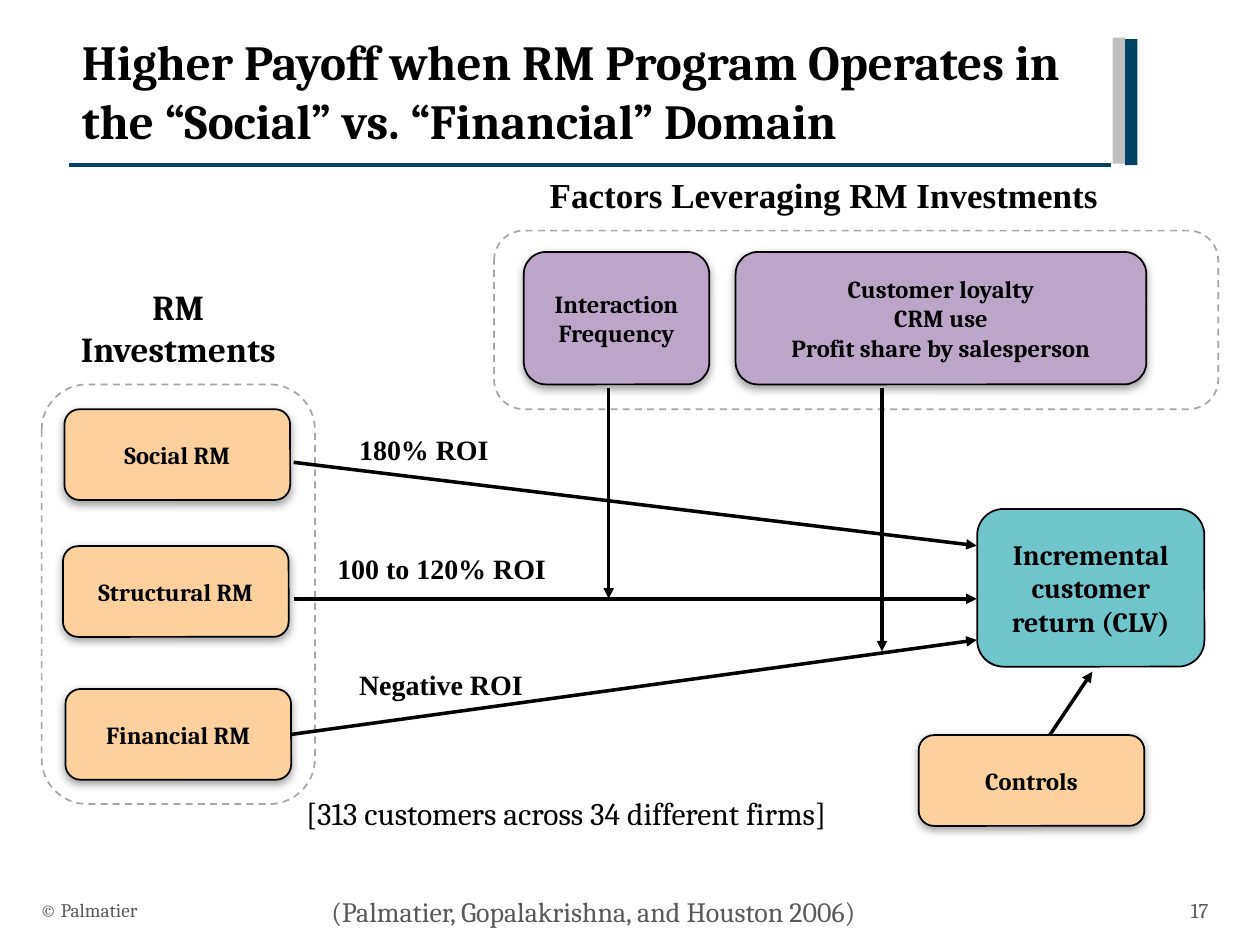
from lxml.etree import SubElement as Sub
from pptx import Presentation
from pptx.dml.color import RGBColor as RGB
from pptx.enum.dml import MSO_LINE as Dash
from pptx.enum.shapes import MSO_CONNECTOR as Conn, MSO_SHAPE as Kind
from pptx.enum.text import MSO_ANCHOR as Anchor, PP_ALIGN as Align
from pptx.oxml.ns import qn
from pptx.util import Cm, Pt

HEX = {"navy": "004264", "silver": "BFBFBF", "dash": "A6A6A6", "gray": "595959",
       "black": "000000", "peach": "FDD09E", "plum": "BCA6C8", "teal": "70C5CA",
       "shade": "808080"}
INK = {name: RGB.from_string(code) for name, code in HEX.items()}
SERIF, TIMES = "Cambria", "Times New Roman"

deck = Presentation()
deck.slide_width, deck.slide_height = Cm(25.4), Cm(19.05)
slide = deck.slides.add_slide(deck.slide_layouts[6])
shapes = slide.shapes


def write(shape, text, size, bold=True, face=SERIF, ink="black",
          align=Align.CENTER, anchor=Anchor.MIDDLE):
    frame = shape.text_frame
    frame.text = text
    frame.word_wrap = True
    frame.vertical_anchor = anchor
    look = {"size": Pt(size), "bold": bold, "name": face}
    for para in frame.paragraphs:
        para.alignment = align
        for key, value in look.items():
            setattr(para.font, key, value)
        para.font.color.rgb = INK[ink]


def draw(kind, place, fill=None, line=None):
    shape = shapes.add_shape(kind, *map(Cm, place))
    shape.shadow.inherit = False
    if fill:
        shape.fill.solid()
        shape.fill.fore_color.rgb = INK[fill]
    else:
        shape.fill.background()
    if line:
        shape.line.color.rgb = INK[line]
        shape.line.width = Pt(1)
    else:
        shape.line.fill.background()
    return shape


# Bars beside the title
draw(Kind.RECTANGLE, (22.68, 0.79, 0.25, 2.54), "navy")
draw(Kind.RECTANGLE, (22.43, 0.76, 0.25, 2.54), "silver")

# Dashed group frames
for place in [(0.84, 7.75, 5.51, 8.46), (9.96, 4.65, 14.6, 3.6)]:
    group = draw(Kind.ROUNDED_RECTANGLE, place, line="dash")
    group.line.dash_style = Dash.DASH

# Boxes: text, place, fill, font size, shadow
boxes = {}
for text, place, fill, size, shade in [
    ("Social RM", (1.3, 8.25, 4.55, 1.83), "peach", 14, True),
    ("Structural RM", (1.27, 11.01, 4.55, 1.83), "peach", 14, True),
    ("Financial RM", (1.32, 13.89, 4.55, 1.83), "peach", 14, True),
    ("Controls", (18.52, 14.82, 4.55, 1.83), "peach", 14, True),
    ("Interaction Frequency", (10.56, 5.08, 3.74, 2.67), "plum", 14, True),
    ("Customer loyalty\nCRM use\nProfit share by salesperson",
     (14.83, 5.08, 8.28, 2.67), "plum", 14, True),
    ("Incremental customer return (CLV)",
     (19.7, 10.26, 4.58, 3.18), "teal", 16, False),
]:
    box = draw(Kind.ROUNDED_RECTANGLE, place, fill, "black")
    write(box, text, size)
    boxes[text] = box
    if shade:
        glow = Sub(box._element.spPr.find(qn("a:effectLst")), qn("a:outerShdw"),
                   blurRad=str(Pt(5)), dist=str(Pt(2)), dir="5400000", rotWithShape="0")
        tint = Sub(glow, qn("a:srgbClr"), val=HEX["shade"])
        Sub(tint, qn("a:alpha"), val="75000")

# Title rule and arrows: ends, colour, arrowhead, box joined at its right side
for ends, ink, head, start in [
    ((1.4, 3.33, 22.4, 3.33), "navy", False, None),
    ((5.92, 9.32, 19.69, 11), "black", True, None),
    ((5.92, 12.07, 19.69, 12.07), "black", True, None),
    ((5.92, 14.81, 19.69, 12.9), "black", True, "Financial RM"),
    ((12.27, 7.82, 12.27, 12.07), "black", True, None),
    ((17.78, 7.82, 17.78, 13.13), "black", True, None),
    ((21.16, 14.82, 22.02, 13.54), "black", True, None),
]:
    link = shapes.add_connector(Conn.STRAIGHT, *map(Cm, ends))
    link.line.color.rgb = INK[ink]
    link.line.width = Pt(2)
    if head:
        Sub(link.line._get_or_add_ln(), qn("a:tailEnd"), type="triangle")
    Sub(link._element.spPr, qn("a:effectLst"))
    if start:
        link.begin_connect(boxes[start], 3)

# Text: words, place, format
plain = {"align": Align.LEFT, "anchor": Anchor.TOP}
head = {"anchor": Anchor.TOP}
label = {**plain, "face": TIMES}
note = {"bold": False, "ink": "gray"}
for text, place, size, look in [
    ("Higher Payoff when RM Program Operates in the “Social” vs. “Financial” Domain",
     (1.4, 0.51, 20.98, 2.24), 28, plain),
    ("RM Investments", (1.27, 5.64, 4.65, 1.96), 20, head),
    ("Factors Leveraging RM Investments", (7.62, 3.38, 17.98, 1.12), 20,
     {**head, "face": TIMES}),
    ("180% ROI", (6.99, 8.59, 3.18, 0.94), 16, label),
    ("100 to 120% ROI", (6.55, 11, 4.88, 0.94), 16, label),
    ("Negative ROI", (6.99, 13.34, 4.45, 0.94), 16, label),
    ("[313 customers across 34 different firms]", (5.92, 15.88, 12.7, 1.02), 18,
     {**plain, "bold": False}),
    ("(Palmatier, Gopalakrishna, and Houston 2006)", (6.43, 17.91, 12.7, 0.94), 16,
     {**plain, **note}),
    ("© Palmatier", (0.56, 17.83, 5.5, 1.02), 11, {**note, "align": Align.LEFT}),
    ("17", (23.06, 17.83, 1.55, 1.02), 12, {**note, "align": Align.RIGHT}),
]:
    write(shapes.add_textbox(*map(Cm, place)), text, size, **look)

deck.save("out.pptx")
